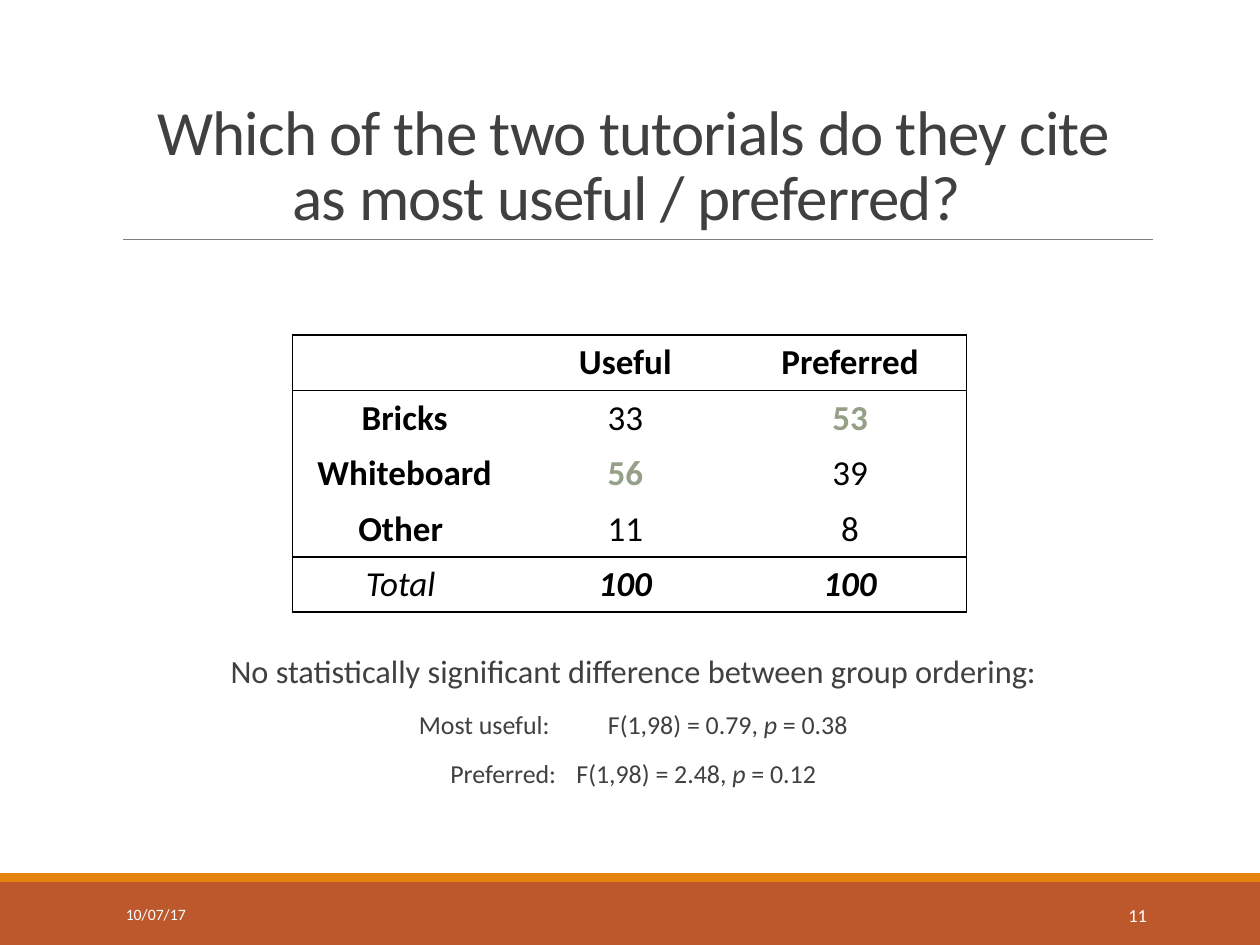
from pptx import Presentation
from pptx.dml.color import RGBColor
from pptx.enum.shapes import MSO_CONNECTOR as Connector, MSO_SHAPE as Shape
from pptx.enum.text import MSO_ANCHOR as Anchor, MSO_AUTO_SIZE as AutoSize, PP_ALIGN as Align
from pptx.oxml.ns import qn
from pptx.util import Inches, Pt
from lxml.etree import SubElement

FONT = "Calibri"
GREY = "404040"
BLACK = "000000"
WHITE = "FFFFFF"
SAGE = "94A088"

ROWS = [
    ["", "Useful ", "Preferred "],
    ["Bricks", "33 ", "53 "],
    ["Whiteboard", "56 ", "39 "],
    ["Other ", "11 ", "8 "],
    ["Total ", "100 ", "100 "],
]
HIGHLIGHTS = {(1, 2), (2, 1)}
RESULTS = [("Most useful:", "0.79", "0.38"), ("Preferred:", "2.48", "0.12")]


def paint(color_format, value):
    color_format.rgb = RGBColor.from_string(value)


def write(para, text, size=20, color=BLACK, bold=False, italic=False,
          align=Align.CENTER, spacing=None):
    para.alignment = align
    span = para.add_run()
    span.text = text
    font = span.font
    font.name, font.size, font.bold, font.italic = FONT, Pt(size), bold, italic
    paint(font.color, color)
    if spacing is not None:
        span._r.get_or_add_rPr().set("spc", str(int(spacing * 100)))


def place(shape, left, top, width, height):
    shape.left, shape.top = Inches(left), Inches(top)
    shape.width, shape.height = Inches(width), Inches(height)


def add_title(page, left, top, width, height):
    title = page.shapes.title
    place(title, left, top, width, height)
    frame = title.text_frame
    frame.auto_size = AutoSize.NONE
    frame.vertical_anchor = Anchor.BOTTOM
    para = frame.paragraphs[0]
    para.line_spacing = 0.85
    write(para, "Which of the two tutorials do they cite as most useful / preferred? ",
          size=36, color=GREY, spacing=-0.5)

    rule_y = Inches(top + height)
    rule = page.shapes.add_connector(
        Connector.STRAIGHT, Inches(left + 0.08), rule_y, Inches(left + width), rule_y)
    rule.line.width = Pt(0.5)
    paint(rule.line.color, "808080")
    SubElement(rule._element.spPr, qn("a:effectLst"))


def border_cell(cell, black_sides):
    properties = cell._tc.get_or_add_tcPr()
    for side in "LRTB":
        line = SubElement(properties, qn(f"a:ln{side}"), w=str(Pt(1)))
        if side in black_sides:
            fill = SubElement(line, qn("a:solidFill"))
            SubElement(fill, qn("a:srgbClr"), val=BLACK)
        else:
            SubElement(line, qn("a:noFill"))
    cell.fill.background()


def add_results_table(page, left, top, width, height):
    last_row, last_column = len(ROWS) - 1, len(ROWS[0]) - 1
    table = page.shapes.add_table(
        len(ROWS), len(ROWS[0]),
        Inches(left), Inches(top), Inches(width), Inches(height)).table
    table.first_row = table.horz_banding = False
    for r, row in enumerate(ROWS):
        for c, text in enumerate(row):
            cell = table.cell(r, c)
            sides = {"L"} if c == 0 else {"R"} if c == last_column else set()
            if r in (0, 1, last_row):
                sides.add("T")
            if r in (0, last_row - 1, last_row):
                sides.add("B")
            border_cell(cell, sides)
            cell.vertical_anchor = Anchor.MIDDLE
            marked = (r, c) in HIGHLIGHTS
            heading = r == 0 or (c == 0) != (r == last_row)
            if text:
                write(cell.text_frame.paragraphs[0], text,
                      color=SAGE if marked else BLACK,
                      bold=heading or marked, italic=r == last_row)


def format_body(para, first=False):
    properties = para._p.get_or_add_pPr()
    properties.set("marL", "0")
    properties.set("indent", "0")
    SubElement(properties, qn("a:buNone"))
    stops = SubElement(properties, qn("a:tabLst"))
    SubElement(stops, qn("a:tab"), pos=str(Inches(2)), algn="l")
    para.line_spacing = 0.8
    para.space_before = Pt(0 if first else 12)
    para.space_after = Pt(2)


def add_findings(page, left, top, width, height):
    body = page.placeholders[1]
    place(body, left, top, width, height)
    frame = body.text_frame
    frame.auto_size = AutoSize.NONE
    frame.vertical_anchor = Anchor.TOP
    frame.margin_left = frame.margin_right = 0
    para = frame.paragraphs[0]
    format_body(para, first=True)
    write(para, "No statistically significant difference between group ordering:",
          size=18.5, color=GREY)
    for label, statistic, probability in RESULTS:
        para = frame.add_paragraph()
        format_body(para)
        write(para, f"{label}\tF(1,98) = {statistic}, ", size=14.8, color=GREY)
        write(para, "p ", size=14.8, color=GREY, italic=True)
        write(para, f"= {probability}", size=14.8, color=GREY)


def add_bar(page, left, top, width, height, color):
    bar = page.shapes.add_shape(
        Shape.RECTANGLE, Inches(left), Inches(top), Inches(width), Inches(height))
    bar.shadow.inherit = False
    bar.fill.solid()
    paint(bar.fill.fore_color, color)
    bar.line.fill.background()


def add_footer(page, left, top, width, height):
    stripe = 0.07
    add_bar(page, left, top + stripe, width, height - stripe, "BD582C")
    add_bar(page, left, top, width, stripe, "E48312")
    labels = [("10/07/17", 0.9, 2.03, 9, Align.LEFT), ("11", 8.12, 1.08, 10.5, Align.RIGHT)]
    for text, offset, label_width, size, align in labels:
        box = page.shapes.add_textbox(
            Inches(left + offset), Inches(top + 0.13), Inches(label_width), Inches(0.4))
        frame = box.text_frame
        frame.word_wrap = True
        frame.vertical_anchor = Anchor.MIDDLE
        write(frame.paragraphs[0], text, size=size, color=WHITE, align=align)


def main():
    deck = Presentation()
    deck.slide_width, deck.slide_height = Inches(10), Inches(7.5)
    page = deck.slides.add_slide(deck.slide_layouts[1])
    page.background.fill.solid()
    paint(page.background.fill.fore_color, WHITE)
    add_footer(page, 0, 6.93, 10, 0.57)
    add_title(page, 0.9, 0.31, 8.25, 1.59)
    add_results_table(page, 2.32, 2.66, 5.35, 2.2)
    add_findings(page, 0.9, 5.18, 8.25, 1.24)
    deck.save("out.pptx")


if __name__ == "__main__":
    main()
